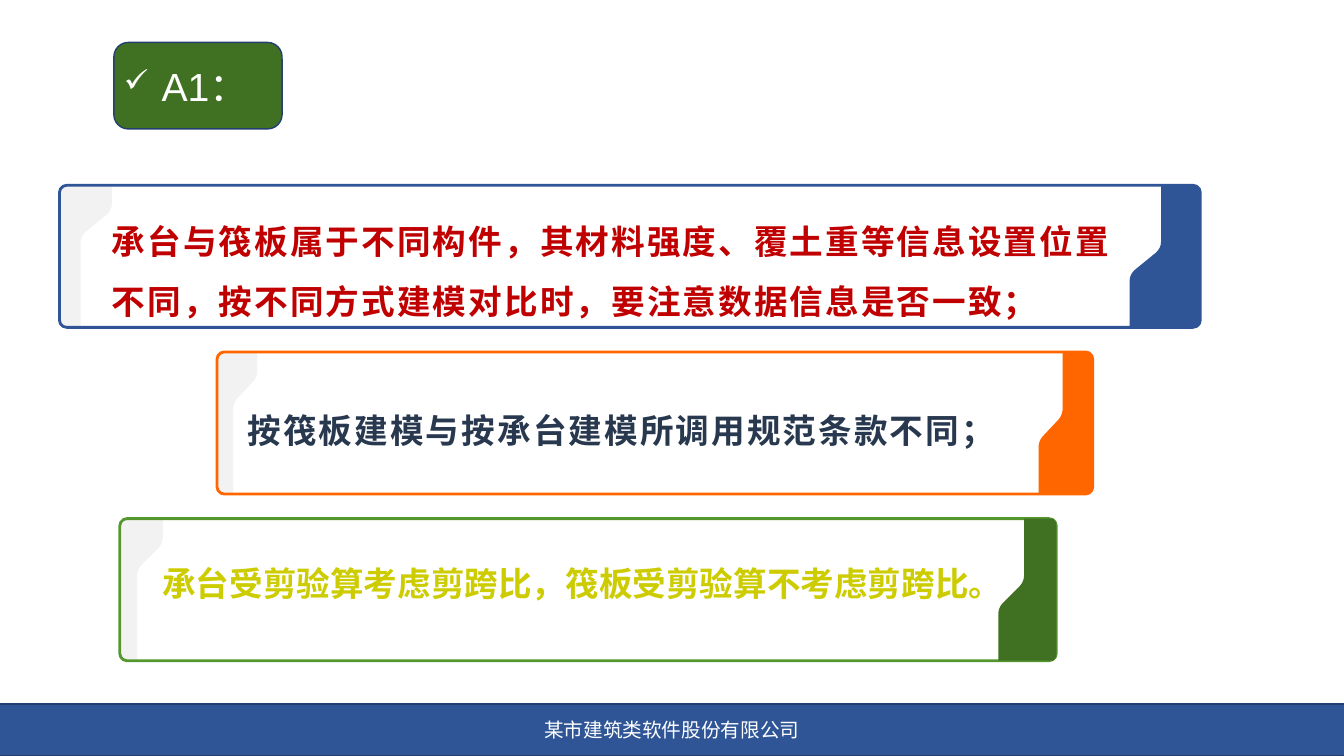
from pptx import Presentation
from pptx.dml.color import RGBColor
from pptx.enum.shapes import MSO_SHAPE
from pptx.enum.text import MSO_ANCHOR, MSO_AUTO_SIZE, PP_ALIGN
from pptx.oxml.ns import qn
from pptx.util import Cm, Pt
from lxml import etree

RECTANGLE, ROUNDED = MSO_SHAPE.RECTANGLE, MSO_SHAPE.ROUNDED_RECTANGLE
TOP, MIDDLE = MSO_ANCHOR.TOP, MSO_ANCHOR.MIDDLE
LEFT, CENTER = PP_ALIGN.LEFT, PP_ALIGN.CENTER
NO_AUTOFIT = MSO_AUTO_SIZE.NONE

WHITE = RGBColor(0xFF, 0xFF, 0xFF)
GREY = RGBColor(0xF2, 0xF2, 0xF2)
NAVY = RGBColor(0x23, 0x3F, 0x70)
BLUE = RGBColor(0x2F, 0x55, 0x97)
ORANGE = RGBColor(0xFF, 0x66, 0x00)
GREEN = RGBColor(0x55, 0x97, 0x2F)
DARK_GREEN = RGBColor(0x40, 0x71, 0x23)
RED = RGBColor(0xC0, 0x00, 0x00)
SLATE = RGBColor(0x28, 0x38, 0x4E)
YELLOW = RGBColor(0xCC, 0xCC, 0x00)

LATIN, CJK = "Arial", "Noto Sans CJK SC"

# Panel measures in centimetres
PANEL_TOP, PANEL_PITCH, PANEL_HEIGHT = 4.67, 4.2, 3.58
FULL_WIDTH = 28.75
CORNER = 0.18

# Left, width, frame colour, tab colour
PANELS = [
    (1.5, FULL_WIDTH, BLUE, BLUE),
    (5.47, 22.07, ORANGE, ORANGE),
    (3.02, 23.6, GREEN, DARK_GREEN),
]

# Wording, box, colour, font, line spacing, letter spacing
STATEMENTS = [
    ("承台与筏板属于不同构件，其材料强度、覆土重等信息设置位置不同，"
     "按不同方式建模对比时，要注意数据信息是否一致；",
     (2.57, 4.93, 26.21, 3.05), RED, CJK, 1.5, 1.5),
    ("按筏板建模与按承台建模所调用规范条款不同；",
     (5.99, 9.7, 19.94, 1.63), SLATE, CJK, 1.5, 1.5),
    ("承台受剪验算考虑剪跨比，筏板受剪验算不考虑剪跨比。",
     (3.84, 14.07, 22, 2.06), YELLOW, LATIN, 1.0, 0),
]


def add_box(shapes, preset, box, fill, line, line_width):
    shape = shapes.add_shape(preset, *map(Cm, box))
    shape.shadow.inherit = False
    if fill is None:
        shape.fill.background()
    else:
        shape.fill.solid()
        shape.fill.fore_color.rgb = fill
    shape.line.color.rgb = line
    shape.line.width = Pt(line_width)
    return shape


def write(frame, wording, size, color, font=LATIN, bold=False, spacing=0,
          line_spacing=1.0, align=LEFT, anchor=TOP):
    frame.word_wrap = True
    frame.auto_size = NO_AUTOFIT
    frame.vertical_anchor = anchor
    paragraph = frame.paragraphs[0]
    paragraph.alignment = align
    paragraph.line_spacing = line_spacing
    run = paragraph.add_run()
    run.text = wording
    run.font.size = Pt(size)
    run.font.bold = bold
    run.font.color.rgb = color
    run.font.name = font
    properties = run.font._element
    etree.SubElement(properties, qn("a:ea")).set("typeface", CJK)
    if spacing:
        properties.set("spc", str(int(spacing * 100)))
    return paragraph


def add_check_bullet(paragraph, indent):
    properties = paragraph._p.get_or_add_pPr()
    properties.set("marL", str(indent))
    properties.set("indent", str(-indent))
    etree.SubElement(properties, qn("a:buSzPct")).set("val", "80000")
    etree.SubElement(properties, qn("a:buChar")).set("char", "✓")


def curve(start, control, end, steps=6):
    """Points of a quadratic curve, both ends included."""
    return [
        tuple((1 - t) ** 2 * a + 2 * t * (1 - t) * b + t * t * c
              for a, b, c in zip(start, control, end))
        for t in (step / steps for step in range(steps + 1))
    ]


def add_tab(shapes, edge, top, inward, scale, top_depth, bottom_depth,
            bend, color):
    """Stepped tab on a panel side; depths run inward from the edge."""
    shift = (bottom_depth - top_depth) / 6
    upper = (top_depth + shift, bend + 0.28)
    lower = (bottom_depth - shift, bend + 0.71)
    outline = (
        curve((0, CORNER), (0, 0), (CORNER, 0))
        + [(top_depth, 0)]
        + curve((top_depth, bend), (top_depth, bend + 0.16), upper)
        + curve(lower, (bottom_depth, bend + 0.83),
                (bottom_depth, bend + 0.99))
        + [(bottom_depth, PANEL_HEIGHT)]
        + curve((CORNER, PANEL_HEIGHT), (0, PANEL_HEIGHT),
                (0, PANEL_HEIGHT - CORNER))
    )
    points = [(Cm(edge + inward * scale * x), Cm(top + y))
              for x, y in outline]
    builder = shapes.build_freeform(*points[0])
    builder.add_line_segments(points[1:], close=True)
    tab = builder.convert_to_shape()
    tab.shadow.inherit = False
    tab.fill.solid()
    tab.fill.fore_color.rgb = color
    tab.line.fill.background()


def add_panel(slide, left, top, width, frame_color, tab_color):
    shapes = slide.shapes.add_group_shape().shapes
    scale = width / FULL_WIDTH
    add_tab(shapes, left, top, 1, scale, 1.32, 0.53, 0.46, GREY)
    frame = add_box(shapes, ROUNDED, (left, top, width, PANEL_HEIGHT),
                    None, frame_color, 2)
    frame.adjustments[0] = 0.051
    add_tab(shapes, left + width, top, -1, scale, 0.99, 1.78, 1.42, tab_color)


def add_heading(slide):
    box = (2.87, 1.07, 4.24, 2.18)
    badge = add_box(slide.shapes, ROUNDED, box, DARK_GREEN, NAVY, 1)
    title = slide.shapes.title
    title.left, title.top, title.width, title.height = map(Cm, box)
    paragraph = write(title.text_frame, "A1：", 28, WHITE, anchor=MIDDLE)
    add_check_bullet(paragraph, Cm(0.95))
    # Keep the title text in front of its badge
    badge._element.addnext(title._element)


def main():
    prs = Presentation()
    prs.slide_width, prs.slide_height = Cm(33.87), Cm(19.05)
    slide = prs.slides.add_slide(prs.slide_layouts[5])

    # Footer band
    footer = add_box(slide.shapes, RECTANGLE, (-0.02, 17.74, 33.91, 1.3),
                     BLUE, NAVY, 1)
    write(footer.text_frame, "某市建筑类软件股份有限公司", 14, WHITE,
          align=CENTER, anchor=MIDDLE)

    # Panels
    for row, (left, width, frame_color, tab_color) in enumerate(PANELS):
        add_panel(slide, left, PANEL_TOP + row * PANEL_PITCH, width,
                  frame_color, tab_color)

    # Statements
    for wording, box, color, font, line_spacing, spacing in STATEMENTS:
        statement = slide.shapes.add_textbox(*map(Cm, box))
        write(statement.text_frame, wording, 24, color, font, bold=True,
              spacing=spacing, line_spacing=line_spacing)

    # Heading badge
    add_heading(slide)

    prs.save("out.pptx")


if __name__ == "__main__":
    main()
